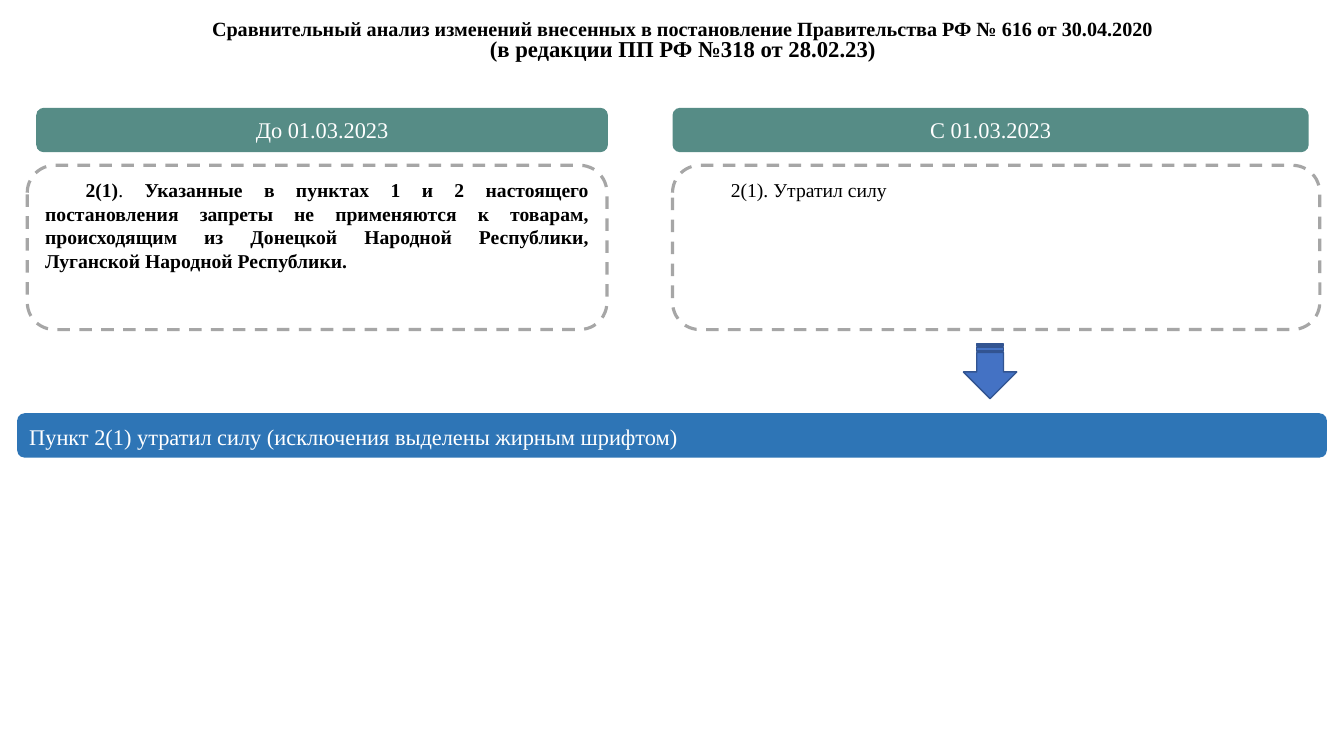
"""Builds a slide comparing a decree's clause before and after 01.03.2023."""
import pptx
import pptx.dml.color
import pptx.enum.dml
import pptx.enum.shapes
import pptx.enum.text
import pptx.util

RGBColor = pptx.dml.color.RGBColor
Inches = pptx.util.Inches
Pt = pptx.util.Pt
MSO_SHAPE = pptx.enum.shapes.MSO_SHAPE
PP_ALIGN = pptx.enum.text.PP_ALIGN
MSO_ANCHOR = pptx.enum.text.MSO_ANCHOR

BLACK = RGBColor(0x00, 0x00, 0x00)
WHITE = RGBColor(0xFF, 0xFF, 0xFF)
GRAY = RGBColor(0xA6, 0xA6, 0xA6)
GREEN = RGBColor(0x56, 0x8C, 0x86)
BLUE = RGBColor(0x2E, 0x75, 0xB6)
ARROW_FILL = RGBColor(0x44, 0x72, 0xC4)
ARROW_LINE = RGBColor(0x32, 0x54, 0x91)


class Deck:
    font = "Times New Roman"

    def __init__(self, width, height):
        self.prs = pptx.Presentation()
        self.prs.slide_width = Inches(width)
        self.prs.slide_height = Inches(height)
        self.s = self.prs.slides.add_slide(self.prs.slide_layouts[5])

    def style(self, p, size, color, align, bold=None):
        p.alignment = align
        p.font.name = self.font
        p.font.size = Pt(size)
        p.font.color.rgb = color
        p.font.bold = bold

    def title(self, box, lines):
        sp = self.s.shapes.title
        sp.left, sp.top, sp.width, sp.height = map(Inches, box)
        tf = sp.text_frame
        tf.word_wrap = True
        tf.auto_size = pptx.enum.text.MSO_AUTO_SIZE.NONE
        tf.vertical_anchor = MSO_ANCHOR.TOP
        tf.margin_top = Inches(0.07)
        tf.text = "\n".join(text for text, size in lines)
        for p, (text, size) in zip(tf.paragraphs, lines):
            self.style(p, size, BLACK, PP_ALIGN.CENTER, True)
            p.line_spacing = 0.8
            p.space_before = Pt(0)

    def shape(self, kind, box):
        sp = self.s.shapes.add_shape(kind, *map(Inches, box))
        sp.shadow.inherit = False
        return sp

    def bar(self, box, text, fill, align=PP_ALIGN.CENTER, spacing=None):
        sp = self.shape(MSO_SHAPE.ROUNDED_RECTANGLE, box)
        sp.fill.solid()
        sp.fill.fore_color.rgb = fill
        sp.line.fill.background()
        tf = sp.text_frame
        tf.vertical_anchor = MSO_ANCHOR.MIDDLE
        tf.text = text
        p = tf.paragraphs[0]
        self.style(p, 16, WHITE, align)
        p.line_spacing = spacing

    def clause(self, box, runs):
        sp = self.shape(MSO_SHAPE.ROUNDED_RECTANGLE, box)
        sp.fill.background()
        sp.line.color.rgb = GRAY
        sp.line.width = Pt(2.25)
        sp.line.dash_style = pptx.enum.dml.MSO_LINE.DASH
        tf = sp.text_frame
        tf.vertical_anchor = MSO_ANCHOR.TOP
        p = tf.paragraphs[0]
        self.style(p, 14, BLACK, PP_ALIGN.JUSTIFY)
        p._p.get_or_add_pPr().set("indent", str(Inches(0.4)))
        for text, bold in runs:
            r = p.add_run()
            r.text = text
            r.font.bold = bold

    def down_arrow(self, box):
        sp = self.shape(MSO_SHAPE.STRIPED_RIGHT_ARROW, box)
        sp.rotation = 90
        sp.fill.solid()
        sp.fill.fore_color.rgb = ARROW_FILL
        sp.line.color.rgb = ARROW_LINE
        sp.line.width = Pt(1)


def main():
    deck = Deck(13.33, 7.5)
    deck.title((0.45, 0.14, 12.64, 0.91), [
        ("Сравнительный анализ изменений внесенных в постановление "
         "Правительства РФ № 616 от 30.04.2020", 14.4),
        ("(в редакции ПП РФ №318 от 28.02.23)", 16.2),
    ])
    deck.clause((0.27, 1.64, 5.75, 1.63), [
        ("2(1)", True),
        (". ", False),
        ("Указанные в пунктах 1 и 2 настоящего постановления запреты не "
         "применяются к товарам, происходящим из Донецкой Народной "
         "Республики, Луганской Народной Республики.", True),
    ])
    deck.clause((6.67, 1.64, 6.42, 1.63), [("2(1). Утратил силу", False)])
    deck.bar((0.36, 1.07, 5.67, 0.44), "До 01.03.2023", GREEN)
    deck.bar((6.67, 1.07, 6.31, 0.44), "С 01.03.2023", GREEN)
    deck.down_arrow((9.55, 3.42, 0.54, 0.53))
    deck.bar((0.17, 4.1, 12.99, 0.44),
             "Пункт 2(1) утратил силу (исключения выделены жирным шрифтом)",
             BLUE, PP_ALIGN.JUSTIFY, 1.07)
    deck.prs.save("out.pptx")


if __name__ == "__main__":
    main()
